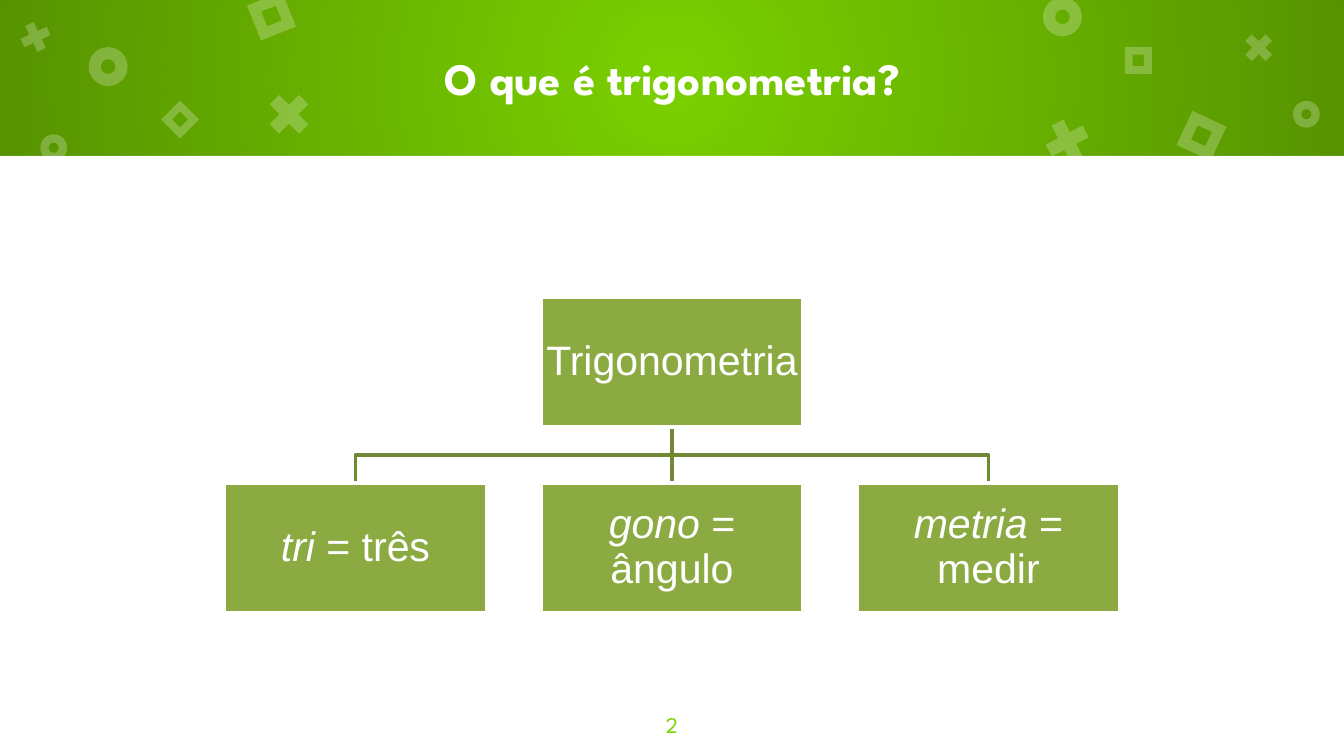
from collections import namedtuple

from lxml.etree import SubElement
from pptx import Presentation
from pptx.dml.color import RGBColor
from pptx.enum.shapes import MSO_CONNECTOR as Connector, MSO_SHAPE as Shape
from pptx.enum.text import MSO_ANCHOR as Anchor, PP_ALIGN as Align
from pptx.oxml import parse_xml
from pptx.oxml.ns import nsdecls, qn
from pptx.util import Inches, Pt

GREEN = RGBColor(0x7B, 0xD1, 0x00)
OLIVE = RGBColor(0x8B, 0xAB, 0x42)
DARK_OLIVE = RGBColor(0x6F, 0x89, 0x35)
WHITE = RGBColor(0xFF, 0xFF, 0xFF)
DISPLAY_FONT = "League Spartan"
BODY_FONT = "Arial"

Box = namedtuple("Box", "left top width height")
SLIDE = Box(0, 0, Inches(10), Inches(10) * 9 // 16)
HEADER = Box(0, 0, SLIDE.width, Inches(1.16))
PANEL = Box(0, HEADER.height, SLIDE.width, SLIDE.height - HEADER.height)
TREE = Box(Inches(1.67), Inches(2.21), Inches(6.66), Inches(2.35))
NUMBER = Box(Inches(4.7), Inches(5.19), Inches(0.6), Inches(0.43))

GRID_COLUMNS, NODE_COLUMNS, COLUMN_STEP = 99, 29, 35
GRID_ROWS, NODE_ROWS, ROW_STEP = 17, 7, 10

ORNAMENT_STYLES = {
    "ring": (Shape.DONUT, 0.31, 0.29, 0.2),
    "cross": (Shape.MATH_MULTIPLY, 0.235, 0.42, 0.29),
    "frame": (Shape.FRAME, 0.289, 0.28, 0.2),
}
Ornament = namedtuple("Ornament", "kind large x_percent y_percent rotation")
ORNAMENTS = [
    Ornament("ring", True, 8.05, 42.7, 0), Ornament("cross", True, 21.5, 73.3, 0),
    Ornament("frame", True, 20.2, 10.3, 338.4), Ornament("ring", True, 79.05, 10.8, 0),
    Ornament("cross", True, 79.4, 90.5, 17.5), Ornament("frame", True, 89.4, 87.1, 25),
    Ornament("ring", False, 4, 94.8, 0), Ornament("cross", False, 2.65, 23.7, 20.4),
    Ornament("frame", False, 13.4, 76.7, 45), Ornament("ring", False, 97.2, 73.3, 0),
    Ornament("cross", False, 93.65, 30.6, 0), Ornament("frame", False, 84.7, 38.8, 0),
]
MEANINGS = [("tri", " = três"), ("gono", " = ângulo"), ("metria", " = medir")]

RADIAL_SHADE = f"""<a:gradFill {nsdecls('a')} rotWithShape="1"><a:gsLst>
<a:gs pos="0"><a:srgbClr val="000000"><a:alpha val="0"/></a:srgbClr></a:gs>
<a:gs pos="100000"><a:srgbClr val="000000"><a:alpha val="30000"/></a:srgbClr></a:gs>
</a:gsLst><a:path path="circle">
<a:fillToRect l="50000" t="50000" r="50000" b="50000"/></a:path></a:gradFill>"""


def add_block(page, box, kind=Shape.RECTANGLE, fill=WHITE, line=None):
    """Add a flat preset shape with a solid fill and an optional 2 pt line."""
    block = page.shapes.add_shape(kind, *map(int, box))
    block.shadow.inherit = False
    block.fill.solid()
    block.fill.fore_color.rgb = fill
    if line is None:
        block.line.fill.background()
    else:
        block.line.color.rgb = line
        block.line.width = Pt(2)
    return block


def write_text(shape, *parts, size, font, color=WHITE, bold=False, inset=0.1,
               anchor=Anchor.MIDDLE, spacing=1.0):
    """Write centred text in a shape, each part a (text, italic) pair."""
    frame = shape.text_frame
    frame.word_wrap = True
    frame.vertical_anchor = anchor
    frame.margin_left = frame.margin_right = Inches(inset)
    frame.margin_top = frame.margin_bottom = Inches(inset)
    para = frame.paragraphs[0]
    para.alignment = Align.CENTER
    para.line_spacing = spacing
    for text, italic in parts:
        span = para.add_run()
        span.text = text
        span.font.name, span.font.size = font, Pt(size)
        span.font.bold, span.font.italic = bold, italic
        span.font.color.rgb = color


def add_ornament(page, box, ornament):
    """Add one translucent ornament centred at percentages of the box."""
    preset, thickness, large_size, small_size = ORNAMENT_STYLES[ornament.kind]
    size = Inches(large_size if ornament.large else small_size)
    left = box.left + box.width * ornament.x_percent / 100 - size / 2
    top = box.top + box.height * ornament.y_percent / 100 - size / 2
    mark = add_block(page, Box(left, top, size, size), preset)
    mark.rotation = ornament.rotation
    mark.adjustments[0] = thickness
    color = mark._element.spPr.find(qn("a:solidFill"))[0]
    SubElement(color, qn("a:alpha"), val="24000")


def add_header(page, box, title):
    """Build the shaded band with its ornaments and title."""
    band = add_block(page, box)
    solid = band._element.spPr.find(qn("a:solidFill"))
    solid.getparent().replace(solid, parse_xml(RADIAL_SHADE))
    for ornament in ORNAMENTS:
        add_ornament(page, box, ornament)
    margin = Inches(0.95)
    heading = page.shapes.add_textbox(margin, box.top, box.width - 2 * margin, box.height)
    write_text(heading, (title, False), size=24, font=DISPLAY_FONT, bold=True)


def add_link(page, parent, child):
    """Join the parent's bottom to the child's top, behind both nodes."""
    start_x, start_y = parent.left + parent.width // 2, parent.top + parent.height
    end_x, end_y = child.left + child.width // 2, child.top
    if start_x == end_x:
        link = page.shapes.add_connector(Connector.STRAIGHT, start_x, start_y, end_x, end_y)
        link.begin_connect(parent, 2)
        link.end_connect(child, 0)
    else:
        middle = (start_y + end_y) // 2
        outline = page.shapes.build_freeform(start_x, start_y)
        outline.add_line_segments(
            [(start_x, middle), (end_x, middle), (end_x, end_y)], close=False)
        link = outline.convert_to_shape()
        link.fill.background()
    link.line.color.rgb = DARK_OLIVE
    link.line.width = Pt(2)
    SubElement(link._element.spPr, qn("a:effectLst"))
    parent._element.addprevious(link._element)


def add_node(page, box, column, row, *parts):
    """Place one labelled node on the tree's grid."""
    column_width, row_height = box.width / GRID_COLUMNS, box.height / GRID_ROWS
    node = add_block(page, Box(
        box.left + column * COLUMN_STEP * column_width,
        box.top + row * ROW_STEP * row_height,
        NODE_COLUMNS * column_width, NODE_ROWS * row_height), fill=OLIVE, line=WHITE)
    write_text(node, *parts, size=22, font=BODY_FONT, inset=0.02, spacing=0.9)
    return node


def add_tree(page, box):
    """Build the word tree: the root above its three parts."""
    root = add_node(page, box, 1, 0, ("Trigonometria", False))
    for column, (stem, meaning) in enumerate(MEANINGS):
        child = add_node(page, box, column, 1, (stem, True), (meaning, False))
        add_link(page, root, child)


def add_page_number(page, box, number):
    """Write the page number at the foot of the page."""
    label = page.shapes.add_textbox(*box)
    write_text(label, (number, False), size=12, font=DISPLAY_FONT, color=GREEN,
               anchor=Anchor.TOP)


def main():
    """Build and save the deck."""
    deck = Presentation()
    deck.slide_width, deck.slide_height = SLIDE.width, SLIDE.height
    page = deck.slides.add_slide(deck.slide_layouts[6])
    page.background.fill.solid()
    page.background.fill.fore_color.rgb = GREEN
    add_block(page, PANEL)
    add_header(page, HEADER, "O que é trigonometria?")
    add_tree(page, TREE)
    add_page_number(page, NUMBER, "2")
    deck.save("out.pptx")


if __name__ == "__main__":
    main()
